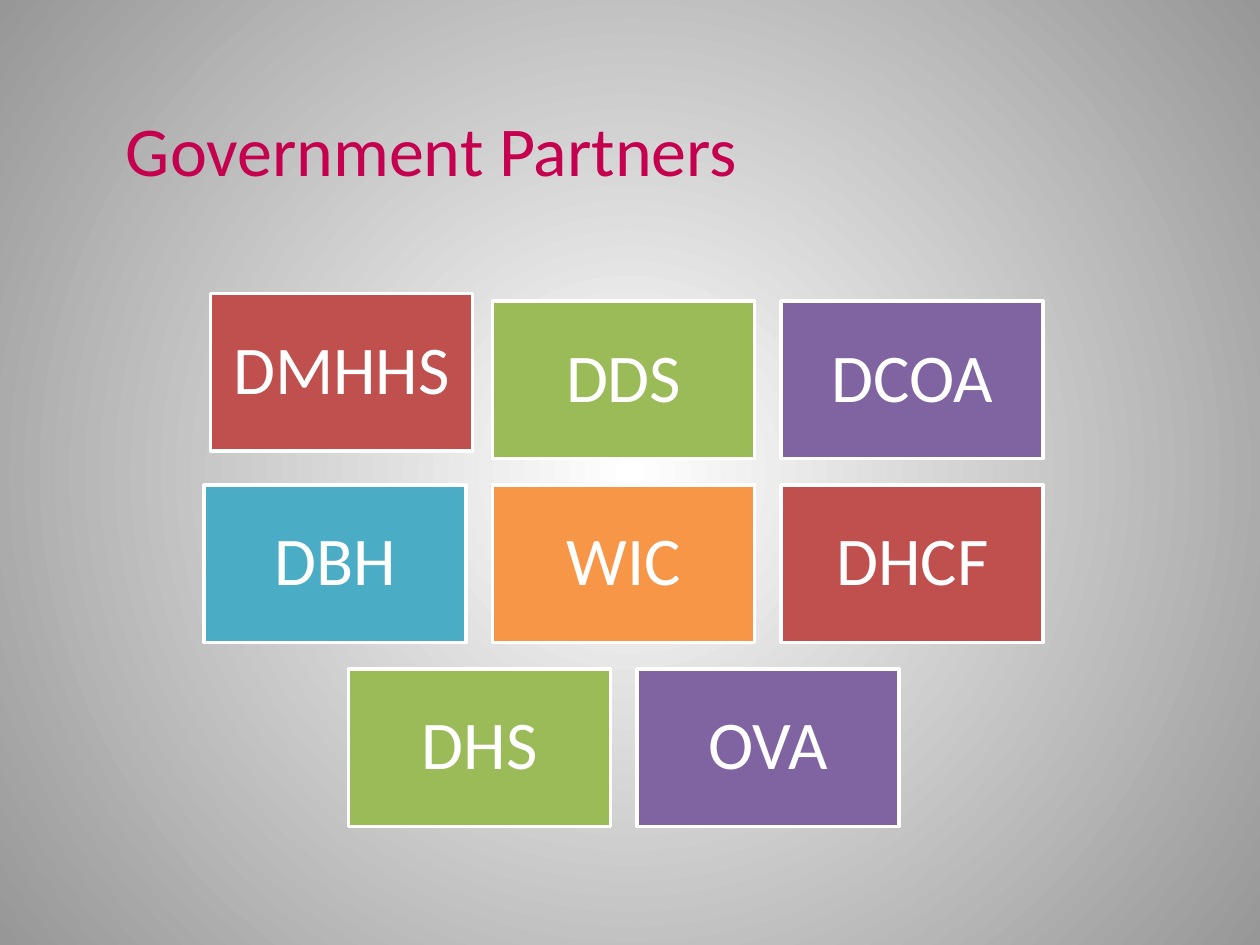
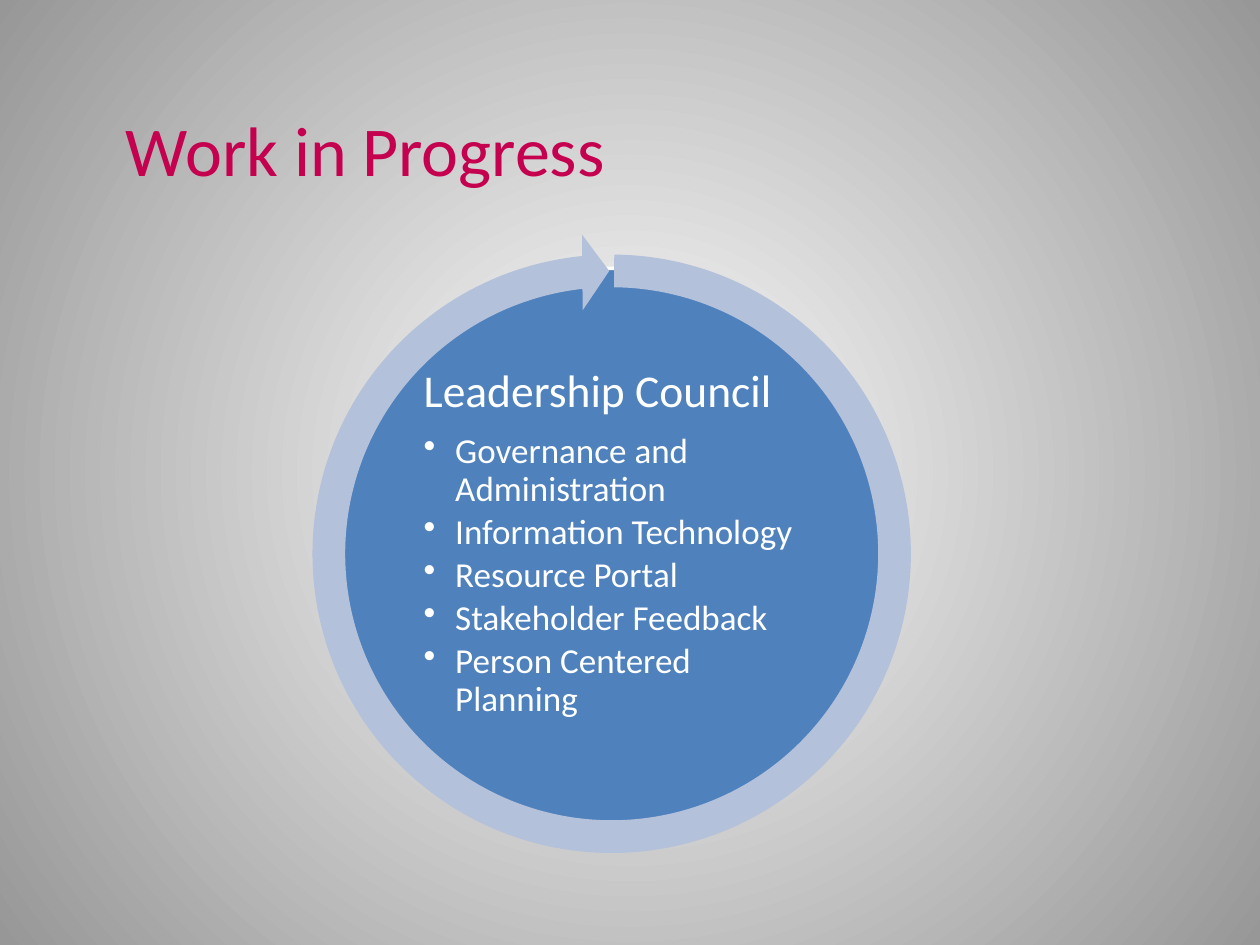
from pptx import Presentation
from pptx.dml.color import RGBColor
from pptx.enum.shapes import MSO_SHAPE as Shape
from pptx.enum.text import MSO_ANCHOR as Anchor, PP_ALIGN as Align
from pptx.oxml.ns import qn
from pptx.util import Inches, Pt
from lxml.etree import SubElement

# Shared look
FONT = "Calibri"
WHITE, GREY, CRIMSON = "FFFFFF", "979797", "C4004F"
RED, GREEN, PURPLE, TEAL, ORANGE = "C0504D", "9BBB59", "8064A2", "4BACC6", "F79646"
BLUE, PALE_BLUE = "4F81BD", "B3C1DB"

# Partner tiles
PARTNER_ROWS = [
    [("DMHHS", RED), ("DDS", GREEN), ("DCOA", PURPLE)],
    [("DBH", TEAL), ("WIC", ORANGE), ("DHCF", RED)],
    [("DHS", GREEN), ("OVA", PURPLE)],
]
NUDGES = {"DMHHS": (0.05, -0.06)}
TILE_WIDTH, TILE_HEIGHT, TILE_GAP = 2.08, 1.25, 0.21
GRID_CENTER, GRID_TOP = 4.95, 2.39

COUNCIL_TOPICS = [
    "Governance and Administration",
    "Information Technology",
    "Resource Portal",
    "Stakeholder Feedback",
    "Person Centered Planning",
]


def color(value):
    return RGBColor.from_string(value)


def set_frame(frame, inset=0, anchor=Anchor.TOP):
    frame.word_wrap = True
    frame.vertical_anchor = anchor
    frame.margin_left = frame.margin_right = Inches(inset)
    frame.margin_top = frame.margin_bottom = Inches(inset)


def add_text(frame, text, size, fill=WHITE, align=Align.LEFT, spacing=0.9,
             after=0, bullet=False):
    """Fill the empty first paragraph, or add another one."""
    first = frame.paragraphs[0]
    para = frame.add_paragraph() if first.runs else first
    if bullet:
        props = para._p.get_or_add_pPr()
        props.set("marL", str(Inches(0.25)))
        props.set("indent", str(Inches(-0.25)))
        SubElement(props, qn("a:buChar"), char="•")
    para.alignment = align
    para.line_spacing = spacing
    para.space_after = Pt(after)
    span = para.add_run()
    span.text = text
    span.font.name, span.font.size = FONT, Pt(size)
    span.font.color.rgb = color(fill)


def add_figure(page, kind, left, top, width, height, fill, line=None):
    figure = page.shapes.add_shape(
        kind, Inches(left), Inches(top), Inches(width), Inches(height))
    figure.shadow.inherit = False
    figure.fill.solid()
    figure.fill.fore_color.rgb = color(fill)
    if line:
        figure.line.color.rgb = color(line)
        figure.line.width = Pt(2)
    else:
        figure.line.fill.background()
    return figure


def add_background(page):
    """Radial gradient, white in the middle."""
    fill = page.background.fill
    fill.gradient()
    for stop, position, value in zip(fill.gradient_stops, (0, 1), (WHITE, GREY)):
        stop.position = position
        stop.color.rgb = color(value)
    gradient = next(page._element.iter(qn("a:gradFill")))
    gradient.remove(gradient.find(qn("a:lin")))
    path = SubElement(gradient, qn("a:path"), path="circle")
    SubElement(path, qn("a:fillToRect"), l="50000", t="50000", r="50000", b="50000")


def add_page(deck, title):
    page = deck.slides.add_slide(deck.slide_layouts[6])
    add_background(page)
    box = page.shapes.add_textbox(Inches(1), Inches(0.83), Inches(7), Inches(0.83))
    set_frame(box.text_frame)
    add_text(box.text_frame, title, 40, fill=CRIMSON, spacing=Pt(49))
    return page


def add_tiles(page):
    for row, partners in enumerate(PARTNER_ROWS):
        row_width = len(partners) * (TILE_WIDTH + TILE_GAP) - TILE_GAP
        for column, (name, fill) in enumerate(partners):
            shift_x, shift_y = NUDGES.get(name, (0, 0))
            left = GRID_CENTER - row_width / 2 + column * (TILE_WIDTH + TILE_GAP)
            top = GRID_TOP + row * (TILE_HEIGHT + TILE_GAP)
            tile = add_figure(page, Shape.RECTANGLE, left + shift_x, top + shift_y,
                              TILE_WIDTH, TILE_HEIGHT, fill, line=WHITE)
            set_frame(tile.text_frame, inset=0.16, anchor=Anchor.MIDDLE)
            add_text(tile.text_frame, name, 39, align=Align.CENTER)


def add_council(page):
    circle = add_figure(page, Shape.OVAL, 2.57, 2.13, 4.53, 4.53, BLUE, line=WHITE)
    frame = circle.text_frame
    set_frame(frame, inset=0.13)
    add_text(frame, "Leadership Council", 26, after=9)
    for topic in COUNCIL_TOPICS:
        add_text(frame, topic, 20, after=3, bullet=True)

    # Ring arrow around the circle
    ring = add_figure(page, Shape.CIRCULAR_ARROW, 2.31, 1.85, 5.09, 5.09, PALE_BLUE)
    for index, value in enumerate((0.051, 3.275, 158.426, 162.299, 0.059)):
        ring.adjustments[index] = value


def main():
    deck = Presentation()
    deck.slide_width, deck.slide_height = Inches(10), Inches(7.5)
    add_tiles(add_page(deck, "Government Partners"))
    add_council(add_page(deck, "Work in Progress"))
    deck.save("out.pptx")


if __name__ == "__main__":
    main()
